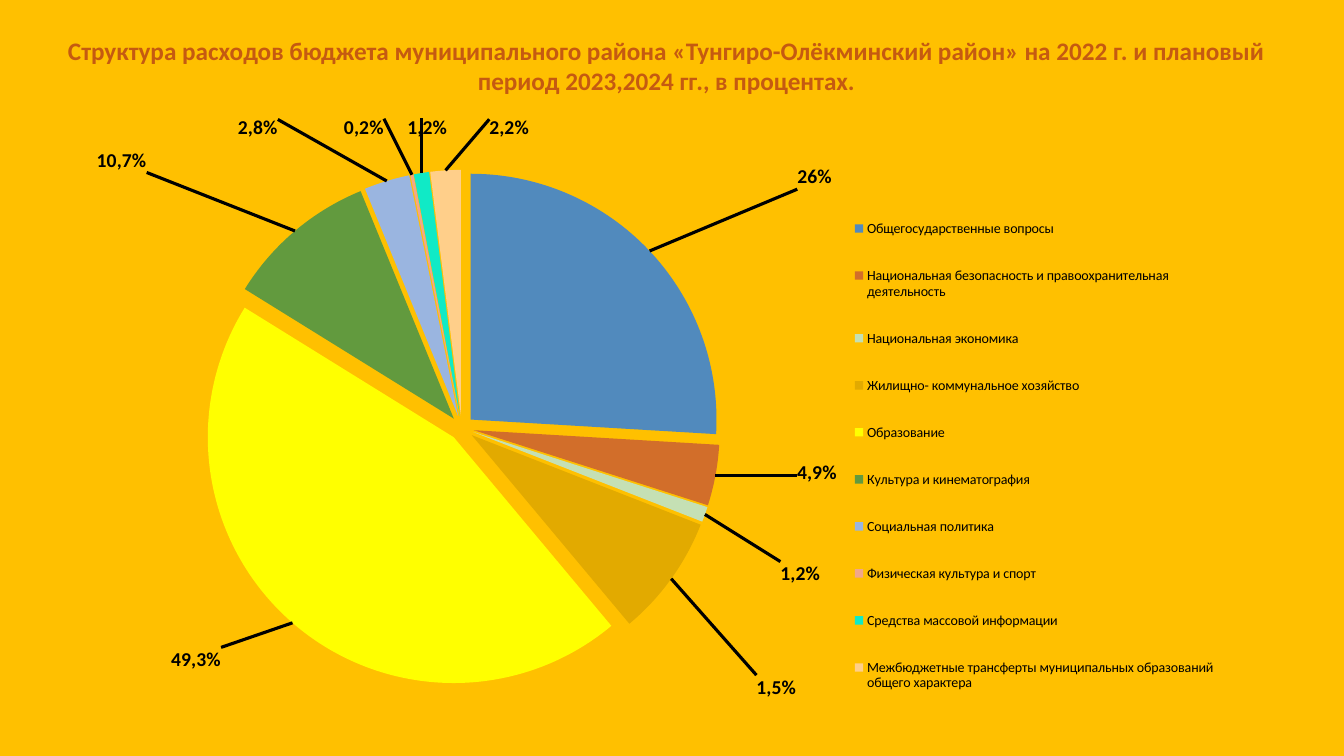
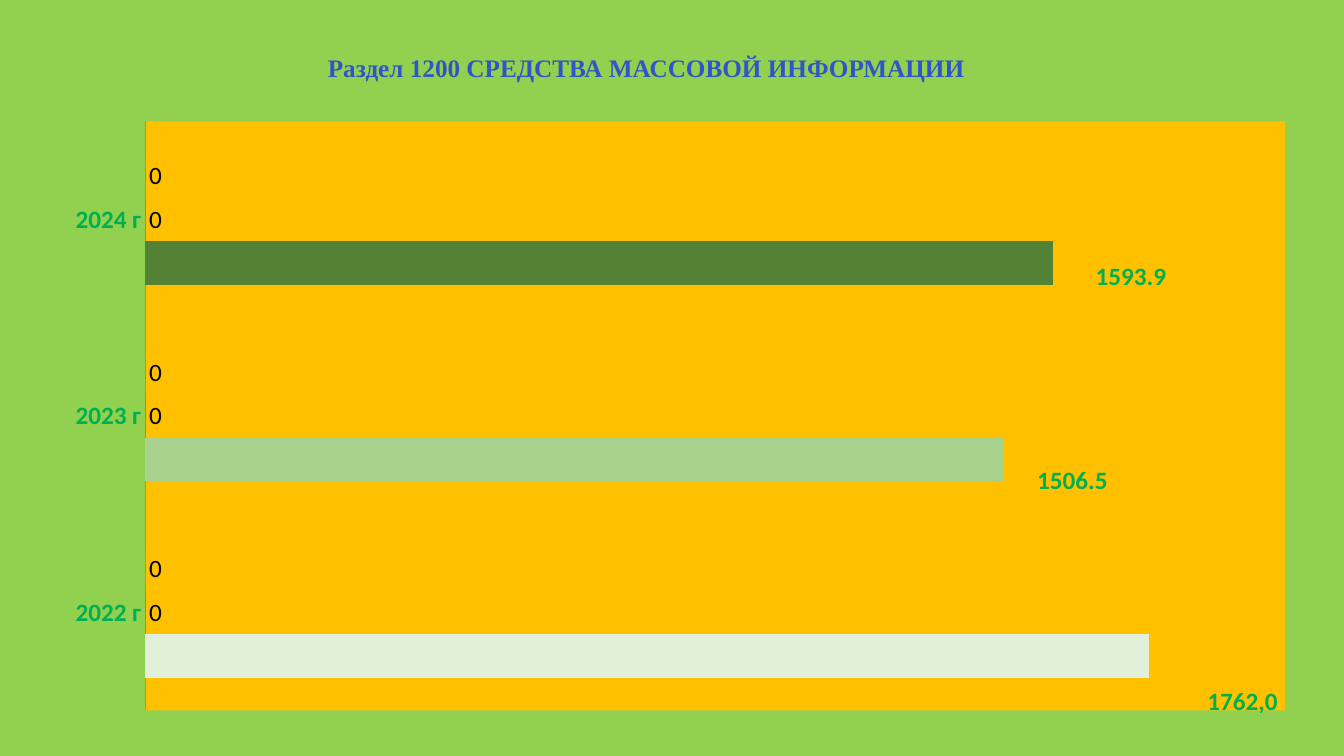
"""Build two budget slides: a pie of spending and bars for mass media."""
from lxml import etree
from pptx import Presentation
from pptx.chart.data import CategoryChartData
from pptx.dml.color import RGBColor
from pptx.enum.chart import (XL_CHART_TYPE, XL_LABEL_POSITION,
                             XL_LEGEND_POSITION, XL_TICK_MARK)
from pptx.enum.text import MSO_AUTO_SIZE, PP_ALIGN
from pptx.oxml.ns import qn
from pptx.util import Inches, Pt

PIE, BAR = XL_CHART_TYPE.PIE, XL_CHART_TYPE.BAR_CLUSTERED
OUT, RIGHT = XL_LABEL_POSITION.OUTSIDE_END, XL_LEGEND_POSITION.RIGHT
NONE, FIT, CENTER = XL_TICK_MARK.NONE, MSO_AUTO_SIZE.SHAPE_TO_FIT_TEXT, PP_ALIGN.CENTER

THEME = {
    "gold": "FFC000", "lime": "92D050", "axis": "92A040", "black": "000000",
    "base": {"name": "Calibri", "size": 18, "color": "000000"},
    "legend": {"name": "Calibri", "size": 10, "color": "000000"},
    "share": {"name": "Calibri", "size": 14, "color": "000000", "bold": True},
    "value": {"name": "Calibri", "size": 18, "color": "00B050", "bold": True},
    "rust": {"name": "Calibri", "size": 18, "color": "C55A11", "bold": True},
    "blue": {"name": "Times New Roman", "size": 18, "color": "3155C9", "bold": True},
}

SPEND = {
    "title": "Структура расходов бюджета муниципального района «Тунгиро-Олёкминский район» "
             "на 2022 г. и плановый период 2023,2024 гг., в процентах.",
    "box": (0.52, 0.3, 12.18, 0.71),
    "area": (0.69, 1.15, 11.56, 6.23),
    "plot": (11.4, 8.6, 44.5, 82.2),
    "legend": (66.5, 11.7, 32.5, 84.9),
    "rows": [
        ("Общегосударственные вопросы", 26, "518ABD", None, (12.3, -9.2)),
        ("Национальная безопасность и правоохранительная деятельность",
         4, "D26E2A", "4,9%", (6.5, -2.5)),
        ("Национальная экономика", 1, "C5E0B4", "1,2%", (6, 7.2)),
        ("Жилищно- коммунальное хозяйство", 8, "E2AA00", "1,5%", (6.9, 14.8)),
        ("Образование", 45, "FFFF00", "49,3%", (-5.8, 3.2)),
        ("Культура и кинематография", 10, "629A3E", "10,7%", (-12.4, -8.6)),
        ("Социальная политика", 3, "9AB5E0", "2,8%", (-9.2, -8.9)),
        ("Физическая культура и спорт", 0.2, "F1A78A", "0,2%", (-2.3, -8)),
        ("Средства массовой информации", 1, "10EAC6", "1,2%", (2.3, -7.8)),
        ("Межбюджетные трансферты муниципальных образований общего характера",
         2, "FFCF8A", "2,2%", (5.5, -7.2)),
    ],
}

MEDIA = {
    "title": "Раздел 1200 СРЕДСТВА МАССОВОЙ ИНФОРМАЦИИ",
    "box": (3.12, 0.47, 6.58, 0.4),
    "area": (0.53, 1.07, 12.22, 6.04),
    "plot": (7.45, 2.25, 92.5, 97.75),
    "rows": [
        ("2022 г", 1762, "E2F0D9", "1762,0", (4.4, 7.6)),
        ("2023 г", 1506.5, "A9D18E", None, (2.4, 3.5)),
        ("2024 г", 1593.9, "548235", None, (3.1, 2.3)),
    ],
}


def style(font, form):
    """Apply a dict of format values to a font."""
    for key, val in form.items():
        if key == "color":
            font.color.rgb = RGBColor.from_string(val)
        else:
            setattr(font, key, Pt(val) if key == "size" else val)


def paint(fill, color):
    """Give a solid fill."""
    fill.solid()
    fill.fore_color.rgb = RGBColor.from_string(color)


def node(tag, val=None):
    """Make one XML element with an optional val."""
    item = etree.Element(qn(tag))
    if val is not None:
        item.set("val", str(val))
    return item


def layout(nums, inner=False):
    """Make a manual layout from percents of the chart."""
    top = node("c:layout")
    hand = node("c:manualLayout")
    top.append(hand)
    if inner:
        hand.append(node("c:layoutTarget", "inner"))
    if len(nums) == 4:
        hand.extend([node("c:xMode", "edge"), node("c:yMode", "edge")])
    for key, num in zip("xywh", nums):
        hand.append(node("c:" + key, round(num / 100, 4)))
    return top


def solid(tag, color, width=None):
    """Make shape properties with a solid fill, or a line if width is given."""
    top, fill = node(tag), node("a:solidFill")
    fill.append(node("a:srgbClr", color))
    if width:
        line = node("a:ln")
        line.set("w", str(Pt(width)))
        line.append(fill)
        top.append(line)
    else:
        top.append(fill)
    return top


def start(deck, data, color, form, wrap):
    """Add a slide with its ground and title."""
    slide = deck.slides.add_slide(deck.slide_layouts[6])
    paint(slide.background.fill, color)
    box = slide.shapes.add_textbox(*map(Inches, data["box"]))
    frame = box.text_frame
    frame.word_wrap, frame.auto_size = wrap, FIT
    para = frame.paragraphs[0]
    para.alignment = CENTER
    run = para.add_run()
    run.text = data["title"]
    style(run.font, form)
    return slide


def draw(slide, data, kind, extra=0):
    """Add a chart with a fixed plot area."""
    rows = data["rows"]
    feed = CategoryChartData()
    feed.categories = [row[0] for row in rows]
    feed.add_series("Series 1", [row[1] for row in rows])
    for num in range(extra):
        feed.add_series(f"Series {num + 2}", [None] * len(rows))
    chart = slide.shapes.add_chart(kind, *map(Inches, data["area"]), feed).chart
    chart.has_title = chart.has_legend = False
    style(chart.font, THEME["base"])
    for gap in chart._chartSpace.iter(qn("c:dispBlanksAs")):
        gap.set("val", "zero")
    area = chart._chartSpace.find(".//" + qn("c:plotArea"))
    for old in area.findall(qn("c:layout")):
        area.remove(old)
    area.insert(0, layout(data["plot"], True))
    return chart, area


def label(series, rows, form, share):
    """Colour the points and place their labels."""
    tags = series.data_labels
    tags.show_value, tags.show_percentage = not share, share
    tags.position = OUT
    style(tags.font, form)
    root = series._element.find(qn("c:dLbls"))
    for num, (_, _, color, text, move) in enumerate(rows):
        point = series.points[num]
        paint(point.format.fill, color)
        tag = point.data_label
        if text:
            para = tag.text_frame.paragraphs[0]
            run = para.add_run()
            run.text = text
            style(run.font, form)
        else:
            style(tag.font, form)
        tag.position = OUT
        item = root.findall(qn("c:dLbl"))[num]
        item.insert(1, layout(move))
        for key, on in (("c:showVal", not share), ("c:showPercent", share)):
            item.find(qn(key)).set("val", str(int(on)))
    for old in root.findall(qn("c:showLeaderLines")):
        root.remove(old)
    root.append(node("c:showLeaderLines", int(share)))
    if share:
        lead = node("c:leaderLines")
        lead.append(solid("c:spPr", THEME["black"], 2.25))
        root.append(lead)


def spend(deck):
    """Build the pie slide."""
    slide = start(deck, SPEND, THEME["gold"], THEME["rust"], True)
    chart, _ = draw(slide, SPEND, PIE)
    plot = chart.plots[0]
    plot.vary_by_categories = True
    series = plot.series[0]
    label(series, SPEND["rows"], THEME["share"], True)
    series._element.find(qn("c:dPt")).addprevious(node("c:explosion", 5))
    chart.has_legend = True
    key = chart.legend
    key.position, key.include_in_layout = RIGHT, False
    style(key.font, THEME["legend"])
    for old in key._element.findall(qn("c:layout")):
        key._element.remove(old)
    key._element.find(qn("c:legendPos")).addnext(layout(SPEND["legend"]))


def media(deck):
    """Build the bar slide."""
    slide = start(deck, MEDIA, THEME["lime"], THEME["blue"], False)
    chart, area = draw(slide, MEDIA, BAR, 2)
    area.append(solid("c:spPr", THEME["gold"]))
    plot = chart.plots[0]
    plot.gap_width, plot.vary_by_categories = 150, False
    first, *rest = plot.series
    label(first, MEDIA["rows"], THEME["value"], False)
    for series in rest:
        tags = series.data_labels
        tags.show_value, tags.position = True, OUT
        style(tags.font, THEME["base"])
    years, scale = chart.category_axis, chart.value_axis
    years.major_tick_mark = years.minor_tick_mark = NONE
    style(years.tick_labels.font, THEME["value"])
    years.format.line.color.rgb = RGBColor.from_string(THEME["axis"])
    scale.minimum_scale, scale.maximum_scale = 0, 2000
    scale.has_major_gridlines = scale.visible = False


def main():
    """Save the deck."""
    deck = Presentation()
    deck.slide_width, deck.slide_height = Inches(13.33), Inches(7.5)
    spend(deck)
    media(deck)
    deck.save("out.pptx")


if __name__ == "__main__":
    main()
